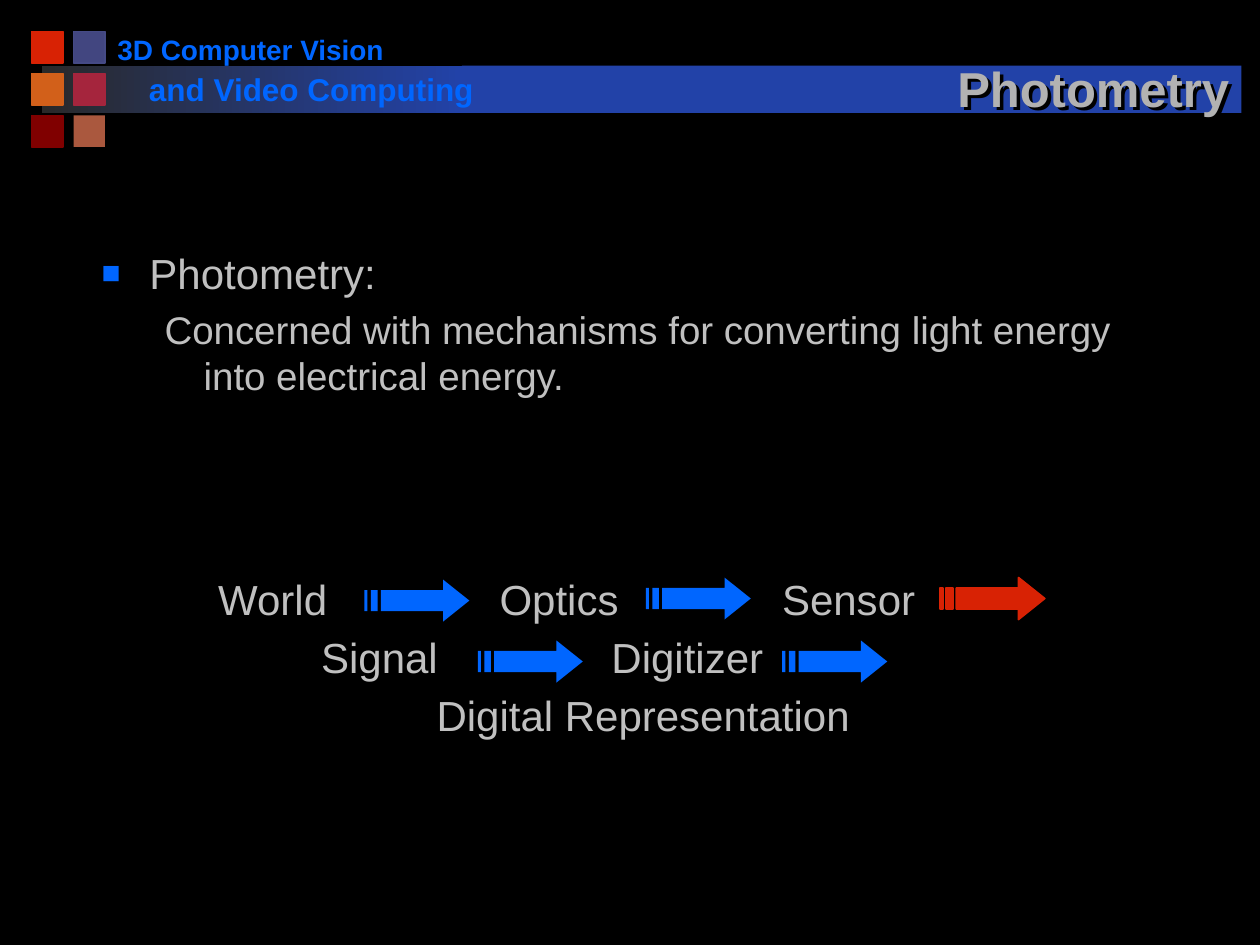
from typing import NamedTuple

from lxml import etree
from pptx import Presentation
from pptx import util as u
from pptx.dml.color import RGBColor
from pptx.enum import shapes, text
from pptx.oxml.ns import qn

COLS = 120
WIDE, HIGH = u.Inches(10), u.Inches(7.5)
CELL = WIDE / COLS
INKS = {
    "black": "000000", "dark": "292929", "band": "2242A8", "blue": "0066FF",
    "red": "D82204", "slate": "424680", "edge": "454A85", "rose": "A5253D",
    "orange": "D2601A", "maroon": "800000", "clay": "AA583E",
    "title": "B2B2B2", "body": "C0C0C0",
}


class Tile(NamedTuple):
    col: int
    row: int
    ink: str
    edge: str | None


class Arrow(NamedTuple):
    col: float
    row: float
    ink: str = "blue"
    edge: str | None = None


class Word(NamedTuple):
    """A step of the diagram: its line, left cell and width in cells."""
    line: int
    col: float
    wide: float
    words: str


class Line(NamedTuple):
    words: str
    size: float
    ink: str = "body"
    bold: bool = False
    gap: float = 0
    left: float = 0
    hang: float = 0
    mark: str = ""


class Block(NamedTuple):
    """A text box, placed in cells."""
    box: tuple
    lines: list
    form: dict = {}
    align: text.PP_ALIGN = text.PP_ALIGN.LEFT
    drop: bool = False


TILES = [
    Tile(1, 0, "slate", "edge"), Tile(1, 1, "rose", "rose"),
    Tile(0, 2, "maroon", "maroon"), Tile(0, 0, "red", "red"),
    Tile(0, 1, "orange", "orange"), Tile(1, 2, "clay", None),
]
ARROWS = [
    Arrow(34.7, 55.2), Arrow(61.5, 55), Arrow(45.5, 61), Arrow(74.5, 61),
    Arrow(89.5, 55, "red", "red"),
]
# Outlines of the arrow head and its two stripes, in cells
PARTS = [
    [(7.5, 0), (7.5, 1), (1.57, 1), (1.57, 3), (7.5, 3), (7.5, 4), (10, 2)],
    [(0.63, 1), (0.63, 3), (1.26, 3), (1.26, 1)],
    [(0, 1), (0, 3), (0.3, 3), (0.3, 1)],
]
WORDS = [
    Word(0, 19.6, 14, "World"), Word(0, 46.4, 15, "Optics"),
    Word(0, 73.3, 16, "Sensor"), Word(1, 29.4, 15, "Signal"),
    Word(1, 57.05, 17.4, "Digitizer"),
    Word(2, 40.4, 43, "Digital Representation"),
]
TOP, STEP = 54, 5.55
BLOCKS = [
    Block((10, 2.5, 28, 4.5), [Line("3D Computer Vision", 16, "blue", True)],
          {"word_wrap": False}),
    Block((13, 6.1, 34, 4.8), [Line("and Video Computing", 18, "blue", True)]),
    Block((88, 3.75, 32.25, 8), [Line("Photometry", 28, "title", True)],
          {"vertical_anchor": text.MSO_ANCHOR.BOTTOM},
          text.PP_ALIGN.CENTER, True),
    Block((8.5, 23, 103, 17), [
        Line("Photometry:", 24, gap=5.5, left=0.38, hang=-0.38, mark="■"),
        Line("Concerned with mechanisms for converting light energy into "
             "electrical energy.", 22, gap=4.4, left=0.81, hang=-0.31)]),
] + [
    Block((word.col, TOP + STEP * word.line, word.wide, 6),
          [Line(word.words, 24, gap=5.5)])
    for word in WORDS
]


def tint(name: str) -> RGBColor:
    return RGBColor.from_string(INKS[name])


def cells(*sides: float) -> list[int]:
    return [round(side * CELL) for side in sides]


def node(up, tag: str, **attrs):
    return etree.SubElement(up, qn(tag), {k: str(v) for k, v in attrs.items()})


def paint(shape, ink: str, edge: str | None) -> None:
    shape.shadow.inherit = False
    shape.fill.solid()
    shape.fill.fore_color.rgb = tint(ink)
    if edge:
        shape.line.color.rgb = tint(edge)
        shape.line.width = u.Pt(1)
    else:
        shape.line.fill.background()


def rect(slide, box: tuple, ink: str, edge: str | None = None):
    shape = slide.shapes.add_shape(shapes.MSO_SHAPE.RECTANGLE, *cells(*box))
    paint(shape, ink, edge)
    return shape


def fade(shape, *inks: str) -> None:
    """Fill from left to right."""
    shape.fill.gradient()
    shape.fill.gradient_angle = 0
    for stop, ink, place in zip(shape.fill.gradient_stops, inks, (0, 1)):
        stop.color.rgb = tint(ink)
        stop.position = place


def draw(slide, arrow: Arrow) -> None:
    parts = [[cells(arrow.col + x, arrow.row + y) for x, y in part]
             for part in PARTS]
    pen = slide.shapes.build_freeform(*parts[0][0])
    for i, part in enumerate(parts):
        if i:
            pen.move_to(*part[0])
        pen.add_line_segments(part[1:], close=True)
    paint(pen.convert_to_shape(), arrow.ink, arrow.edge)


def shade(box) -> None:
    """Drop a hard black shadow behind the letters of an unfilled box."""
    fx = node(box._element.spPr, "a:effectLst")
    drop = node(fx, "a:outerShdw", dist=35921, dir=2700000, algn="ctr")
    node(drop, "a:srgbClr", val=INKS["black"])


def write(para, line: Line) -> None:
    para.space_before = u.Pt(line.gap)
    props = para._p.get_or_add_pPr()
    props.set("marL", str(u.Inches(line.left)))
    props.set("indent", str(u.Inches(line.hang)))
    if line.mark:
        node(node(props, "a:buClr"), "a:srgbClr", val=INKS["blue"])
        node(props, "a:buSzPct", val=75000)
        node(props, "a:buFont", typeface="Arial")
        node(props, "a:buChar", char=line.mark)
    else:
        node(props, "a:buNone")
    run = para.add_run()
    run.text = line.words
    form = {"name": "Arial", "size": u.Pt(line.size), "bold": line.bold}
    for key, value in form.items():
        setattr(run.font, key, value)
    run.font.color.rgb = tint(line.ink)


def place(slide, block: Block) -> None:
    box = slide.shapes.add_textbox(*cells(*block.box))
    frame = box.text_frame
    for key, value in ({"word_wrap": True} | block.form).items():
        setattr(frame, key, value)
    for i, line in enumerate(block.lines):
        para = frame.add_paragraph() if i else frame.paragraphs[0]
        para.alignment = block.align
        write(para, line)
    if block.drop:
        shade(box)


def main() -> None:
    deck = Presentation()
    deck.slide_width, deck.slide_height = WIDE, HIGH
    slide = deck.slides.add_slide(deck.slide_layouts[6])
    slide.background.fill.solid()
    slide.background.fill.fore_color.rgb = tint("black")
    fade(rect(slide, (4, 6.25, 40, 4.5), "dark"), "dark", "band")
    for tile in TILES:
        rect(slide, (3 + 4 * tile.col, 3 + 4 * tile.row, 3, 3),
             tile.ink, tile.edge)
    rect(slide, (44, 6.25, 74.25, 4.5), "band")
    for block in BLOCKS:
        place(slide, block)
    for arrow in ARROWS:
        draw(slide, arrow)
    deck.save("out.pptx")


if __name__ == "__main__":
    main()
